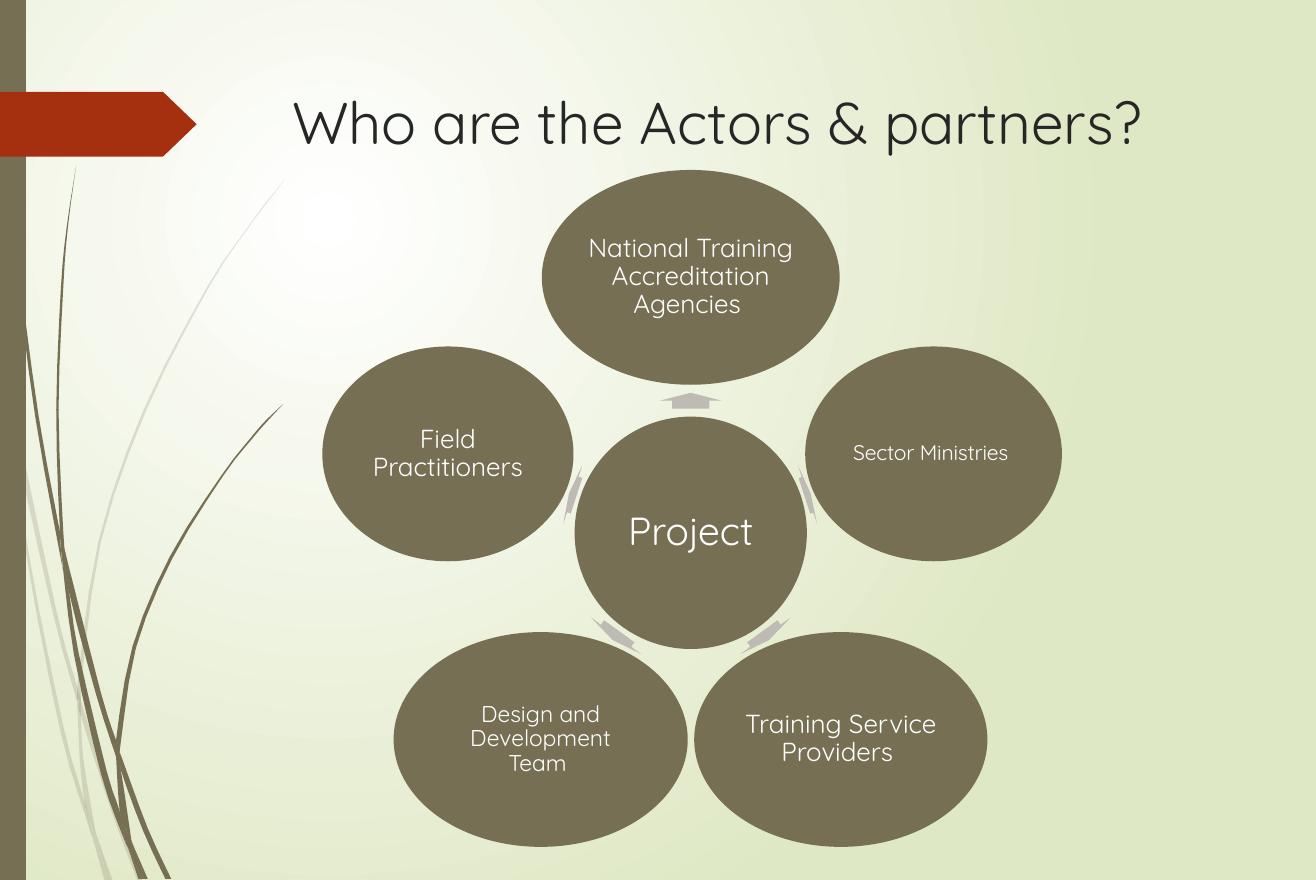
from math import cos, hypot, radians, sin

from lxml.etree import SubElement
from pptx import Presentation
from pptx.dml.color import RGBColor
from pptx.enum.shapes import MSO_SHAPE
from pptx.enum.text import MSO_ANCHOR, MSO_AUTO_SIZE, PP_ALIGN
from pptx.oxml.ns import qn
from pptx.util import Cm, Pt

WIDE, HIGH = 28.5, 19.05
OLIVE, RUST, GREY = "766F54", "A53010", "BDBBB4"
FONT = "Quicksand"

# Each piece of grass: left edge, right edge, both from tip to root,
# on a grid of 250 by 750 units.
PALE = [
    ([(0, 282), (0, 299), (8, 344), (9, 350)], [(0, 282), (7, 322), (9, 350)]),
    ([(11, 345), (13, 376), (45, 522), (66, 599)], [(11, 345), (48, 520), (66, 586)]),
    ([(69, 596), (69, 610), (96, 694), (117, 750)], [(69, 596), (72, 607), (99, 692), (121, 750)]),
    ([(82, 711), (93, 750)], [(82, 711), (96, 750)]),
    ([(9, 350), (22, 470), (51, 621), (72, 693), (79, 714)],
     [(9, 350), (13, 376), (24, 469), (54, 619), (72, 683), (77, 707)]),
    ([(66, 599), (68, 646), (72, 683), (75, 692), (82, 711)],
     [(66, 599), (69, 610), (71, 646), (81, 706)]),
    ([(243, 153), (225, 175), (209, 197), (177, 244), (123, 348), (84, 461), (66, 584), (69, 596)],
     [(243, 153), (226, 175), (209, 198), (178, 245), (125, 349), (86, 462), (69, 584)]),
    ([(79, 714), (89, 750)], [(79, 714), (92, 750)]),
    ([(66, 586), (66, 599), (68, 608)], [(66, 586), (69, 596), (69, 610)]),
    ([(72, 683), (77, 707), (79, 714), (92, 750)], [(72, 683), (75, 692), (82, 711), (93, 750)]),
]
DARK = [
    ([(3, 0), (3, 48), (6, 110), (15, 233), (30, 355), (52, 477), (53, 481)],
     [(3, 0), (4, 48), (7, 109), (17, 232), (33, 355), (51, 453), (51, 457)]),
    ([(56, 472), (59, 505), (82, 592), (99, 645)], [(56, 472), (86, 590), (99, 631)]),
    ([(102, 641), (103, 656), (122, 708), (141, 749)], [(102, 641), (105, 649), (126, 706), (146, 749)]),
    ([(53, 477), (63, 557), (86, 659), (103, 708), (109, 722)],
     [(53, 477), (59, 505), (67, 556), (91, 657), (102, 691), (107, 717)]),
    ([(65, 141), (57, 193), (52, 245), (48, 349), (51, 449), (55, 472)],
     [(65, 141), (58, 193), (54, 245), (50, 349), (54, 453), (56, 472)]),
    ([(113, 719), (123, 749)], [(113, 719), (126, 749)]),
    ([(51, 449), (51, 453), (53, 477), (59, 505)], [(51, 449), (55, 472), (56, 472), (59, 505)]),
    ([(242, 344), (227, 358), (214, 373), (189, 405), (145, 474), (113, 551), (99, 631), (102, 641)],
     [(242, 344), (228, 359), (215, 374), (190, 406), (147, 476), (116, 552), (103, 633)]),
    ([(109, 722), (118, 749)], [(109, 722), (121, 749)]),
    ([(99, 645), (102, 691), (107, 706), (113, 719)], [(99, 645), (103, 656), (112, 716)]),
    ([(99, 631), (99, 645), (103, 656)], [(99, 631), (102, 641), (103, 656)]),
    ([(102, 691), (107, 717), (109, 722), (121, 749)], [(102, 691), (107, 706), (113, 719), (123, 749)]),
]

# Text, size, letter spacing, width of the oval; clockwise from the top.
ACTORS = [
    ("National Training Accreditation Agencies ", 16, 0, 6.45),
    ("Sector Ministries ", 13, -0.1, 5.56),
    ("Training Service Providers ", 16, 0, 6.35),
    ("Design and Development Team ", 14, 0, 6.37),
    ("Field Practitioners", 16, 0, 5.44),
]


def tint(text):
    return RGBColor.from_string(text)


def paint(shape, color, alpha=None):
    """Give a shape a plain fill, without line or shadow."""
    shape.shadow.inherit = False
    shape.line.fill.background()
    shape.fill.solid()
    shape.fill.fore_color.rgb = tint(color)
    if alpha:
        node = shape.fill._xPr.find(".//" + qn("a:srgbClr"))
        SubElement(node, qn("a:alpha")).set("val", str(alpha * 1000))
    return shape


def write(frame, text, size=16, color="FFFFFF", align=PP_ALIGN.CENTER,
          anchor=MSO_ANCHOR.MIDDLE, space=0.9, track=0):
    frame.word_wrap = True
    frame.auto_size = MSO_AUTO_SIZE.NONE
    frame.vertical_anchor = anchor
    frame.text = text
    para = frame.paragraphs[0]
    para.alignment = align
    para.line_spacing = space
    font = para.runs[0].font
    font.name, font.size = FONT, Pt(size)
    font.color.rgb = tint(color)
    if track:
        font._element.set("spc", str(round(track * 100)))


def place(slide, kind, x, y, wide, high, color):
    """Add a preset shape around the centre x, y."""
    shape = slide.shapes.add_shape(kind, Cm(x - wide / 2), Cm(y - high / 2),
                                   Cm(wide), Cm(high))
    return paint(shape, color)


def curve(knots, steps=3):
    """Points of a smooth (Catmull-Rom) line through the knots."""
    ends = [knots[0], *knots, knots[-1]]
    points = []
    for a, b, c, d in zip(ends, ends[1:], ends[2:], ends[3:]):
        for t in (i / steps for i in range(steps)):
            points.append(tuple(
                q + t * (r - p + t * (2 * p - 5 * q + 4 * r - s
                                      + t * (3 * q - p - 3 * r + s))) / 2
                for p, q, r, s in zip(a, b, c, d)))
    return points + [knots[-1]]


def grass(slide, x, y, wide, high):
    for blades, alpha in ((PALE, 20), (DARK, None)):
        for left, right in blades:
            rim = [(Cm(x + u * wide / 250), Cm(y + v * high / 750))
                   for u, v in curve(left) + curve(right)[::-1]]
            form = slide.shapes.build_freeform(*rim[0])
            form.add_line_segments(rim[1:])
            paint(form.convert_to_shape(), OLIVE, alpha)


def back(slide):
    fill = slide.background.fill
    fill.gradient()
    for stop, color in zip(fill.gradient_stops, ("FFFFFF", "DFE8C4")):
        stop.color.rgb = tint(color)
    line = slide.element.find(".//" + qn("a:lin"))
    grad = line.getparent()
    grad.remove(line)
    glow = SubElement(grad, qn("a:path"))
    glow.set("path", "circle")
    rect = SubElement(glow, qn("a:fillToRect"))
    for side, share in zip("ltrb", (50, 50, 100, 100)):
        rect.set(side, str(share * 1000))


def edge(slide, x, y, high):
    """Draw the side bar and the tab that points at the title."""
    place(slide, MSO_SHAPE.RECTANGLE, x + 0.28, y + high / 2, 0.56, high, OLIVE)
    tab = place(slide, MSO_SHAPE.PENTAGON, x + 2.13, y + 2.69, 4.26, 1.4, RUST)
    tab.adjustments[0] = 0.52


def head(slide, x, y, wide, high):
    title = slide.shapes.title
    title.left, title.top, title.width, title.height = map(Cm, (x, y, wide, high))
    write(title.text_frame, "Who are the Actors & partners?", size=36, color="262626",
          align=PP_ALIGN.LEFT, anchor=MSO_ANCHOR.TOP, space=1)


def oval(slide, x, y, wide, high, text, size, track=0):
    shape = place(slide, MSO_SHAPE.OVAL, x, y, wide, high, OLIVE)
    frame = shape.text_frame
    frame.margin_left = frame.margin_right = Cm(0.05)
    frame.margin_top = frame.margin_bottom = Cm(0.05)
    write(frame, text, size=size, track=track)


def wheel(slide, x, y, wide):
    """Draw a hub with the actors around it, arrows in the middle of each gap."""
    hub, tall, ring = 5.03, 4.65, 5.53
    midx, midy = x + wide / 2, y + tall / 2 + ring
    oval(slide, midx, midy, hub, hub, "Project", 24)
    for i, (text, size, track, span) in enumerate(ACTORS):
        turn = i * 360 / len(ACTORS) - 90
        dx, dy = cos(radians(turn)), sin(radians(turn))
        reach = 0.5 / hypot(dx / span, dy / tall)
        gap = ring - reach - hub / 2
        mid = (hub + gap) / 2
        arrow = place(slide, MSO_SHAPE.RIGHT_ARROW, midx + mid * dx, midy + mid * dy,
                      gap / 2, 1.35, GREY)
        arrow.rotation = turn % 360
        arrow.adjustments[0], arrow.adjustments[1] = 0.6, 0.5
        oval(slide, midx + ring * dx, midy + ring * dy, span, tall, text, size, track)


def main():
    deck = Presentation()
    deck.slide_width, deck.slide_height = Cm(WIDE), Cm(HIGH)
    slide = deck.slides.add_slide(deck.slide_layouts[5])
    back(slide)
    grass(slide, 0, 0, 6.35, HIGH)
    edge(slide, 0, 0, HIGH)
    head(slide, 6.07, 1.73, 20.55, 3.56)
    wheel(slide, 6.96, 3.68, 16)
    deck.save("out.pptx")


if __name__ == "__main__":
    main()
